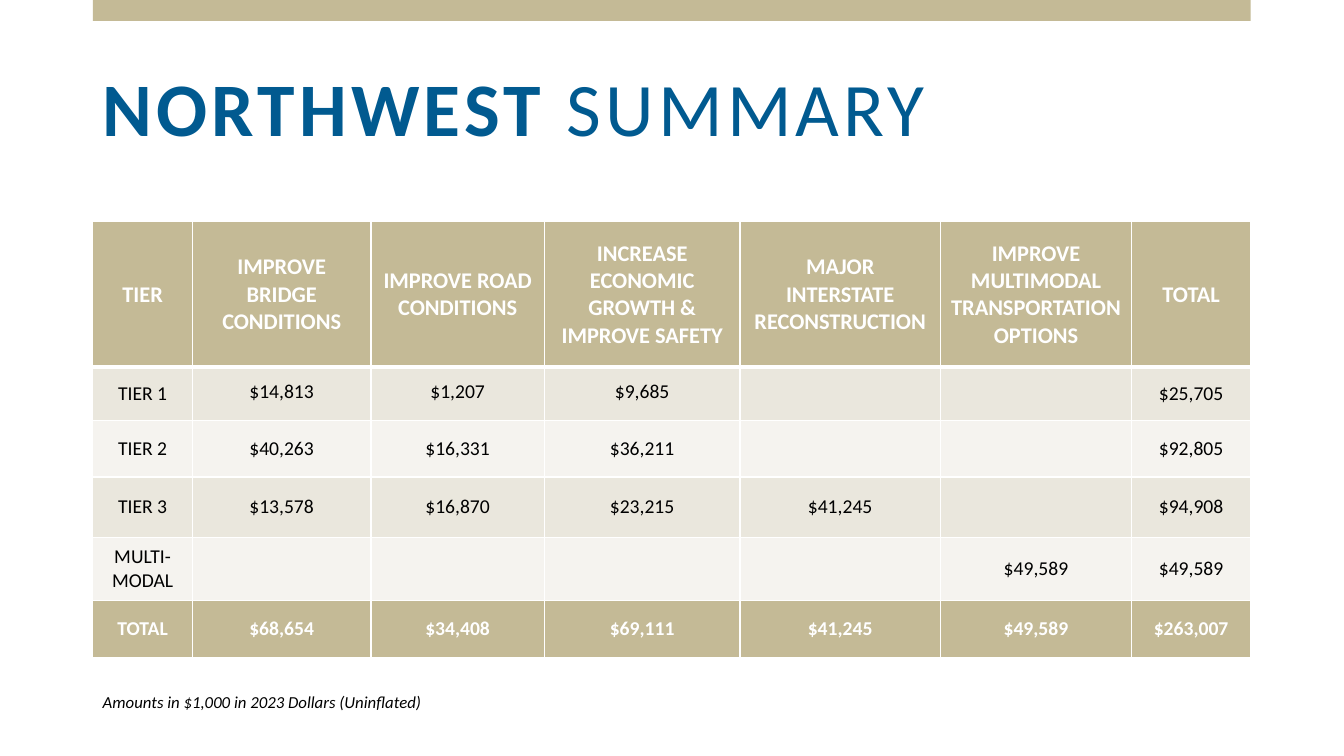
from dataclasses import dataclass

from lxml.etree import SubElement
from pptx import Presentation
from pptx.dml.color import RGBColor
from pptx.enum.shapes import MSO_SHAPE
from pptx.enum.text import MSO_ANCHOR, PP_ALIGN
from pptx.oxml.ns import qn
from pptx.slide import Slide
from pptx.table import _Cell
from pptx.text.text import _Paragraph
from pptx.util import Cm, Pt

TAN = RGBColor(0xC4, 0xBA, 0x96)
BAND_DARK = RGBColor(0xEA, 0xE7, 0xDD)
BAND_LIGHT = RGBColor(0xF5, 0xF3, 0xEF)
BLUE = RGBColor(0x01, 0x5A, 0x90)
WHITE = RGBColor(0xFF, 0xFF, 0xFF)
BLACK = RGBColor(0x00, 0x00, 0x00)

LEFT, WIDTH = Cm(2.34), Cm(29.18)
COLUMN_WIDTHS = (2.51, 4.5, 4.37, 4.93, 5.05, 4.82, 3.0)


@dataclass(frozen=True)
class TierRow:
    height: float
    texts: tuple[str, ...]
    fill: RGBColor
    color: RGBColor = BLACK
    size: int = 14
    bold: bool = False
    top_border: int = 1
    bottom_border: int = 1
    value_margin: float = 0
    value_bottom_margin: float = 0


ROWS = (
    TierRow(3.66, ("TIER", "IMPROVE BRIDGE CONDITIONS", "IMPROVE ROAD CONDITIONS",
                   "INCREASE ECONOMIC GROWTH & IMPROVE SAFETY",
                   "MAJOR INTERSTATE RECONSTRUCTION",
                   "IMPROVE MULTIMODAL TRANSPORTATION OPTIONS", "TOTAL"),
            TAN, WHITE, 16, True, bottom_border=3,
            value_margin=0.25, value_bottom_margin=0.13),
    TierRow(1.35, ("TIER 1", "$14,813", "$1,207", "$9,685", "", "", "$25,705"),
            BAND_DARK, top_border=3, value_margin=0.03, value_bottom_margin=0.13),
    TierRow(1.42, ("TIER 2", "$40,263", "$16,331", "$36,211", "", "", "$92,805"),
            BAND_LIGHT),
    TierRow(1.52, ("TIER 3", "$13,578", "$16,870", "$23,215", "$41,245", "", "$94,908"),
            BAND_DARK),
    TierRow(1.6, ("MULTI-MODAL", "", "", "", "", "$49,589", "$49,589"), BAND_LIGHT),
    TierRow(1.42, ("TOTAL", "$68,654", "$34,408", "$69,111", "$41,245", "$49,589",
                   "$263,007"), TAN, WHITE, bold=True),
)


def add_text(paragraph: _Paragraph, text: str, *, size: int, color: RGBColor,
             bold: bool = False, italic: bool = False, spacing: int = 0) -> None:
    run = paragraph.add_run()
    run.text = text
    run.font.name = "Calibri"
    run.font.size = Pt(size)
    run.font.color.rgb = color
    run.font.bold = bold
    run.font.italic = italic
    if spacing:
        run.font._element.set("spc", str(spacing * 100))


def set_borders(cell: _Cell, top: int, bottom: int) -> None:
    properties = cell._tc.get_or_add_tcPr()
    for side, points in (("L", 1), ("R", 1), ("T", top), ("B", bottom)):
        line = SubElement(properties, qn(f"a:ln{side}"), w=str(Pt(points)))
        fill = SubElement(line, qn("a:solidFill"))
        SubElement(fill, qn("a:srgbClr"), val=str(WHITE))


def format_cell(cell: _Cell, text: str, row: TierRow, is_value: bool) -> None:
    set_borders(cell, row.top_border, row.bottom_border)
    cell.fill.solid()
    cell.fill.fore_color.rgb = row.fill
    cell.vertical_anchor = MSO_ANCHOR.MIDDLE
    if is_value:
        cell.margin_left = cell.margin_right = Cm(row.value_margin)
        cell.margin_top = Cm(min(row.value_margin, 0.13))
        cell.margin_bottom = Cm(row.value_bottom_margin)
    paragraph = cell.text_frame.paragraphs[0]
    paragraph.alignment = PP_ALIGN.CENTER
    if text:
        add_text(paragraph, text, size=row.size, color=row.color, bold=row.bold)


def add_summary_table(slide: Slide) -> None:
    height = Cm(sum(row.height for row in ROWS))
    table = slide.shapes.add_table(len(ROWS), len(COLUMN_WIDTHS), LEFT, Cm(5.59),
                                   WIDTH, height).table
    for column, width in zip(table.columns, COLUMN_WIDTHS):
        column.width = Cm(width)
    for row_index, row in enumerate(ROWS):
        table.rows[row_index].height = Cm(row.height)
        for column_index, text in enumerate(row.texts):
            is_value = 0 < column_index < len(COLUMN_WIDTHS) - 1
            format_cell(table.cell(row_index, column_index), text, row, is_value)


def add_paragraph_box(slide: Slide, top: float, width: Cm, height: float,
                      anchor: MSO_ANCHOR) -> _Paragraph:
    frame = slide.shapes.add_textbox(LEFT, Cm(top), width, Cm(height)).text_frame
    frame.word_wrap = True
    frame.vertical_anchor = anchor
    return frame.paragraphs[0]


def main() -> None:
    presentation = Presentation()
    presentation.slide_width = Cm(33.87)
    presentation.slide_height = Cm(19.05)
    slide = presentation.slides.add_slide(presentation.slide_layouts[6])

    top_bar = slide.shapes.add_shape(MSO_SHAPE.RECTANGLE, LEFT, 0, WIDTH, Cm(0.53))
    top_bar.shadow.inherit = False
    top_bar.fill.solid()
    top_bar.fill.fore_color.rgb = TAN
    top_bar.line.fill.background()

    title = add_paragraph_box(slide, 1.02, WIDTH, 3.63, MSO_ANCHOR.MIDDLE)
    title.line_spacing = 0.9
    add_text(title, "NORTHWEST ", size=54, color=BLUE, bold=True, spacing=3)
    add_text(title, "SUMMARY", size=54, color=BLUE, spacing=3)

    add_summary_table(slide)

    footnote = add_paragraph_box(slide, 17.3, Cm(13.61), 0.76, MSO_ANCHOR.TOP)
    add_text(footnote, "Amounts in $1,000 in 2023 Dollars (Uninflated)",
             size=12, color=BLACK, italic=True)

    presentation.save("out.pptx")


if __name__ == "__main__":
    main()
